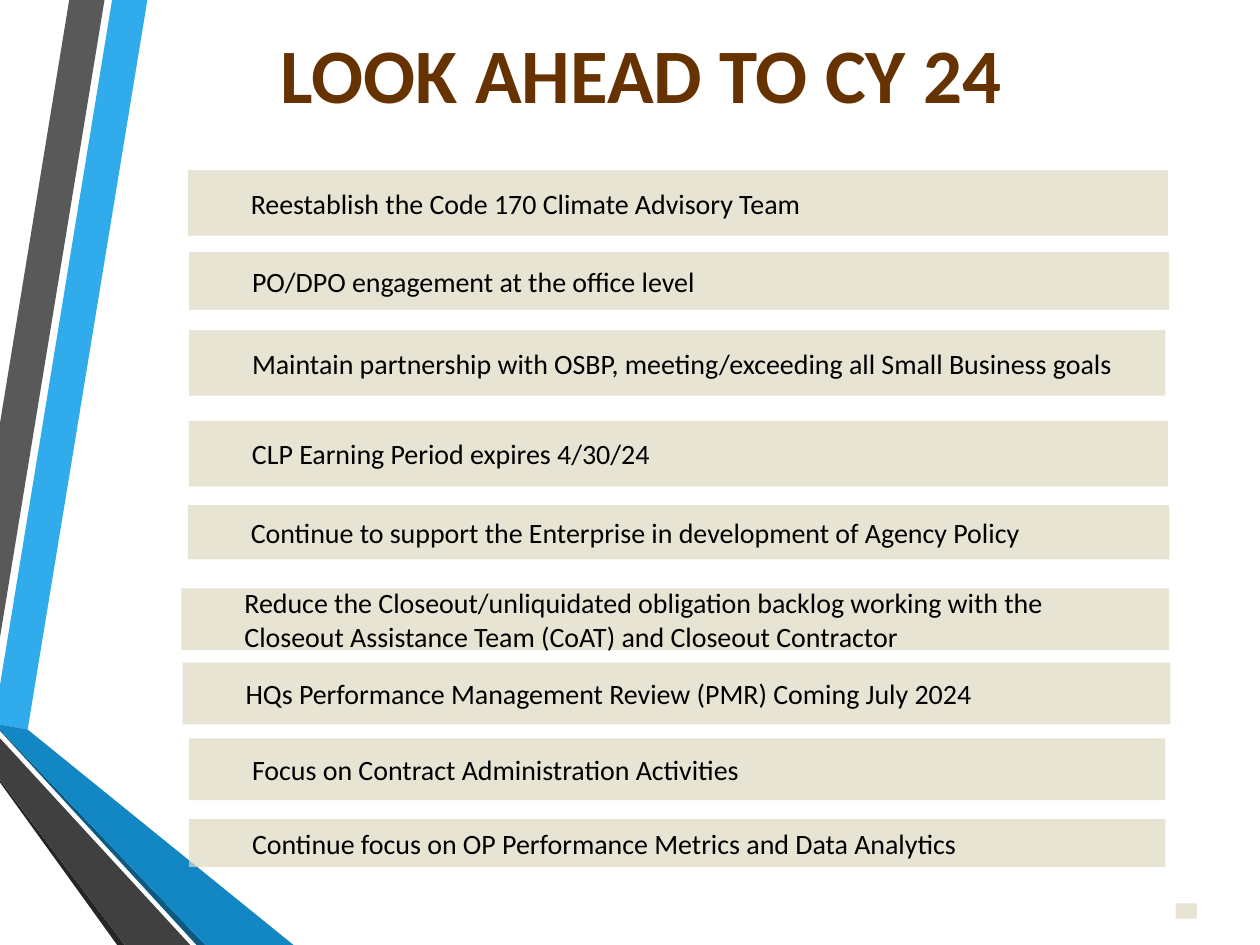
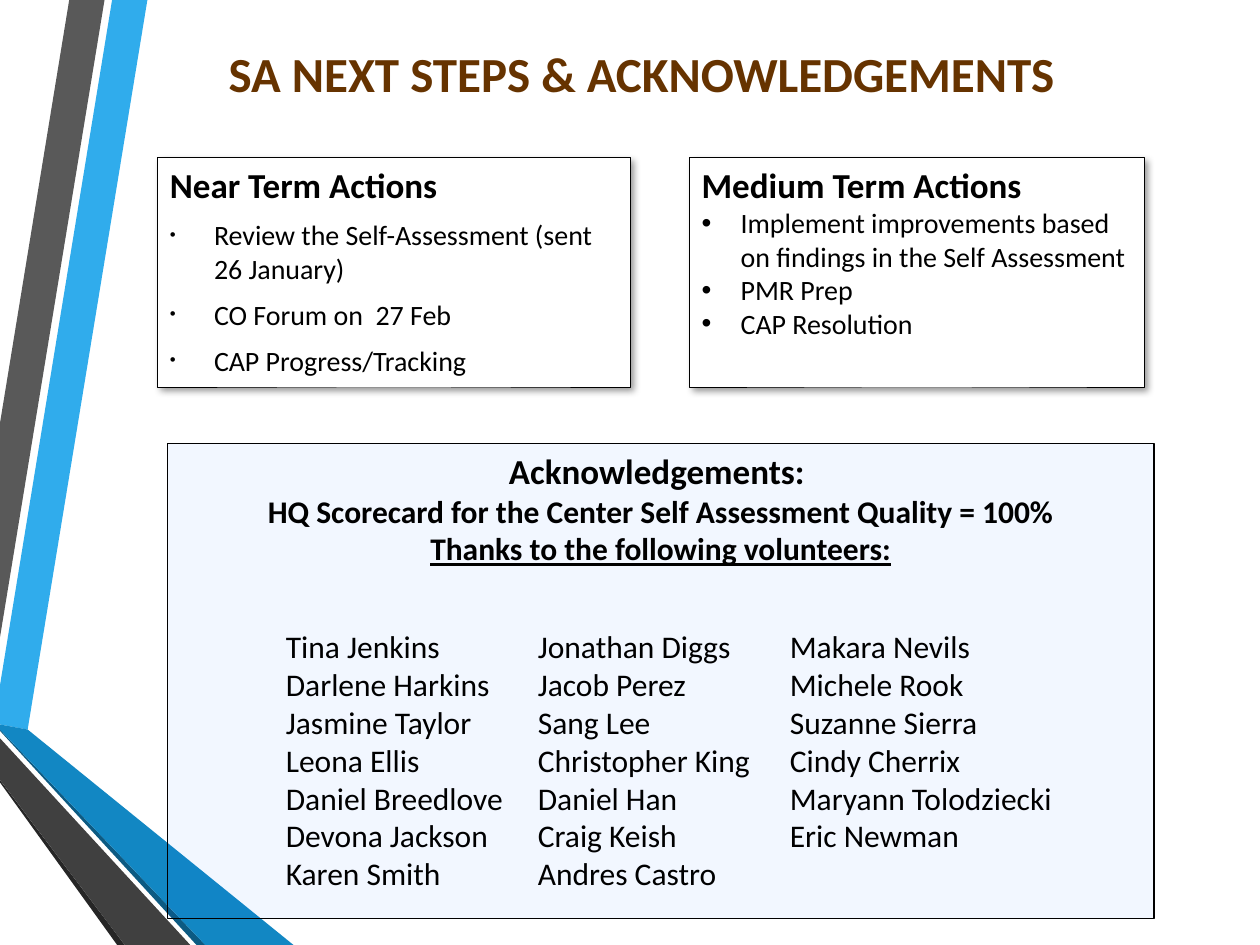
"""Build the look-ahead and next-steps slides."""
import dataclasses
import typing

import lxml.etree
import pptx
import pptx.dml.color
import pptx.enum.shapes
import pptx.enum.text
import pptx.oxml.ns
import pptx.util

PX = 9144
ALIGN = pptx.enum.text.PP_ALIGN
ANCHOR = pptx.enum.text.MSO_ANCHOR


@dataclasses.dataclass(frozen=True)
class Theme:
    font: str = "Calibri"
    ink: str = "000000"
    title: str = "663300"
    row: str = "DDD9C3"
    card: str = "FFFFFF"
    thanks: str = "0066FF"
    body: int = 16
    name: int = 18
    head: int = 20


class Box(typing.NamedTuple):
    x: int
    y: int
    w: int
    h: int


class Band(typing.NamedTuple):
    color: str
    points: list[tuple[int, int]]


class Row(typing.NamedTuple):
    box: Box
    lines: list[str]


class Card(typing.NamedTuple):
    box: Box
    head: str
    items: list[str]
    indent: int
    before: int
    bullet: int


THEME = Theme()

BANDS = [
    Band("30ACEC", [(0, 544), (0, 575), (22, 579), (117, 0), (89, 0)]),
    Band("595959", [(83, 0), (55, 0), (0, 336), (0, 506)]),
    Band("262626", [(0, 619), (0, 621), (93, 750), (99, 750)]),
    Band("0C5A82", [(0, 579), (0, 580), (156, 750), (163, 750)]),
    Band("1287C3", [(0, 579), (163, 750), (233, 750), (22, 579), (0, 575)]),
    Band("404040", [(0, 619), (99, 750), (151, 750), (0, 586)]),
]

ROWS = [
    Row(Box(149, 135, 778, 52), ["Reestablish the Code 170 Climate Advisory Team"]),
    Row(Box(150, 200, 778, 46), ["PO/DPO engagement at the office level"]),
    Row(Box(150, 262, 775, 52),
        ["Maintain partnership with OSBP, meeting/exceeding all Small Business goals"]),
    Row(Box(150, 334, 777, 52), ["CLP Earning Period expires 4/30/24"]),
    Row(Box(149, 401, 779, 43),
        ["Continue to support the Enterprise in development of Agency Policy"]),
    Row(Box(144, 467, 784, 49),
        ["Reduce the Closeout/unliquidated obligation backlog working with the",
         "Closeout Assistance Team (CoAT) and Closeout Contractor"]),
    Row(Box(145, 526, 784, 49), ["HQs Performance Management Review (PMR) Coming July 2024"]),
    Row(Box(150, 586, 775, 49), ["Focus on Contract Administration Activities"]),
    Row(Box(150, 650, 775, 38), ["Continue focus on OP Performance Metrics and Data Analytics"]),
    Row(Box(933, 717, 17, 12), []),
]

CARDS = [
    Card(Box(125, 125, 375, 182), "Near Term Actions",
         ["Review the Self-Assessment (sent 26 January)", "CO Forum on  27 Feb",
          "CAP Progress/Tracking"], 35, 7, 60),
    Card(Box(547, 125, 361, 182), "Medium Term Actions",
         ["Implement improvements based on findings in the Self Assessment",
          "PMR Prep", "CAP Resolution"], 31, 0, 100),
]

NAMES = [
    ["Tina Jenkins", "Darlene Harkins", "Jasmine Taylor", "Leona Ellis",
     "Daniel Breedlove", "Devona Jackson", "Karen Smith"],
    ["Jonathan Diggs", "Jacob Perez", "Sang Lee", "Christopher King",
     "Daniel Han", "Craig Keish", "Andres Castro"],
    ["Makara Nevils", "Michele Rook", "Suzanne Sierra", "Cindy Cherrix",
     "Maryann Tolodziecki", "Eric Newman"],
]


def rgb(color: str) -> pptx.dml.color.RGBColor:
    return pptx.dml.color.RGBColor.from_string(color)


def emu(box: Box) -> list[int]:
    return [side * PX for side in box]


def add_tag(parent, tag: str, **attrs):
    """Append a child tag and return it."""
    texts = {key: str(value) for key, value in attrs.items()}
    return lxml.etree.SubElement(parent, pptx.oxml.ns.qn(tag), texts)


def set_frame(shape, anchor=ANCHOR.TOP, inset: bool = True):
    """Wrap the text, set its anchor and return the frame."""
    frame = shape.text_frame
    frame.word_wrap = True
    frame.vertical_anchor = anchor
    if not inset:
        frame.margin_left = frame.margin_top = 0
        frame.margin_right = frame.margin_bottom = 0
    return frame


def write(frame, text: str, *, size: int = THEME.body, color: str = THEME.ink,
          bold: bool = False, under: bool = False, align=ALIGN.LEFT,
          before: int = 0, indent: int = 0, bullet: int = 0) -> None:
    """Add one paragraph of formatted text."""
    para = frame.paragraphs[-1]
    if para.runs:
        para = frame.add_paragraph()
    para.alignment = align
    para.space_before = pptx.util.Pt(before)
    props = para._p.get_or_add_pPr()
    props.set("marL", str(indent * PX))
    if bullet:
        props.set("indent", str(-indent * PX))
        add_tag(props, "a:buSzPct", val=bullet * 1000)
        add_tag(props, "a:buFont", typeface="Arial")
        add_tag(props, "a:buChar", char="•")
    run = para.add_run()
    run.text = text
    font = run.font
    font.name, font.size = THEME.font, pptx.util.Pt(size)
    font.bold, font.underline = bold, under
    font.color.rgb = rgb(color)


def paint(shape, fill: str, alpha: int = 100, line: float = 0) -> None:
    """Set a flat fill and an optional outline."""
    shape.shadow.inherit = False
    shape.fill.solid()
    shape.fill.fore_color.rgb = rgb(fill)
    if alpha < 100:
        color = shape._element.spPr.find(".//" + pptx.oxml.ns.qn("a:srgbClr"))
        add_tag(color, "a:alpha", val=alpha * 1000)
    if line:
        shape.line.color.rgb = rgb(THEME.ink)
        shape.line.width = pptx.util.Pt(line)
    else:
        shape.line.fill.background()


def add_rect(slide, box: Box, fill: str, alpha: int = 100, line: float = 0):
    kind = pptx.enum.shapes.MSO_SHAPE.RECTANGLE
    shape = slide.shapes.add_shape(kind, *emu(box))
    paint(shape, fill, alpha, line)
    return shape


def cast_shade(shape) -> None:
    """Give a shape a soft shadow down and to the right."""
    effects = shape._element.spPr.find(pptx.oxml.ns.qn("a:effectLst"))
    shade = add_tag(effects, "a:outerShdw", blurRad=pptx.util.Pt(4), dist=pptx.util.Pt(3),
                    dir=45 * 60000, algn="tl", rotWithShape=0)
    color = add_tag(shade, "a:srgbClr", val=THEME.ink)
    add_tag(color, "a:alpha", val=40000)


def add_page(deck, title: str, size: int):
    """Add a slide with the side bands and a title."""
    slide = deck.slides.add_slide(deck.slide_layouts[6])
    for band in BANDS:
        path = slide.shapes.build_freeform(*band.points[0], scale=PX)
        path.add_line_segments(band.points[1:], close=True)
        paint(path.convert_to_shape(), band.color)
    label = slide.shapes.add_textbox(*emu(Box(18, 8, 982, 100)))
    frame = set_frame(label, ANCHOR.MIDDLE, inset=False)
    write(frame, title, size=size, color=THEME.title, bold=True, align=ALIGN.CENTER)
    return slide


def draw_row(slide, row: Row) -> None:
    shape = add_rect(slide, row.box, THEME.row, alpha=70)
    frame = set_frame(shape, ANCHOR.MIDDLE, inset=False)
    for line in row.lines:
        write(frame, line, indent=50)


def draw_card(slide, card: Card) -> None:
    shape = add_rect(slide, card.box, THEME.card, line=0.25)
    cast_shade(shape)
    frame = set_frame(shape)
    write(frame, card.head, size=THEME.head, bold=True)
    for item in card.items:
        write(frame, item, before=card.before, indent=card.indent, bullet=card.bullet)


def draw_thanks(slide) -> None:
    """Draw the thanks panel and its columns of names."""
    panel = add_rect(slide, Box(133, 352, 783, 377), THEME.thanks, alpha=5, line=0.75)
    frame = set_frame(panel)
    write(frame, "Acknowledgements: ", size=THEME.head, bold=True, align=ALIGN.CENTER)
    write(frame, "HQ Scorecard for the Center Self Assessment Quality = 100%",
          size=THEME.name, bold=True, align=ALIGN.CENTER)
    write(frame, "Thanks to the following volunteers:",
          size=THEME.name, bold=True, under=True, align=ALIGN.CENTER)
    for col, names in enumerate(NAMES):
        box = Box(217 + 200 * col, 493, 238, 222)
        frame = set_frame(slide.shapes.add_textbox(*emu(box)))
        for name in names:
            write(frame, name, size=THEME.name)


def main() -> None:
    deck = pptx.Presentation()
    deck.slide_width, deck.slide_height = 1000 * PX, 750 * PX
    ahead = add_page(deck, "LOOK AHEAD TO CY 24", 44)
    for row in ROWS:
        draw_row(ahead, row)
    steps = add_page(deck, "SA NEXT STEPS & ACKNOWLEDGEMENTS", 28)
    for card in CARDS:
        draw_card(steps, card)
    draw_thanks(steps)
    deck.save("out.pptx")


if __name__ == "__main__":
    main()
